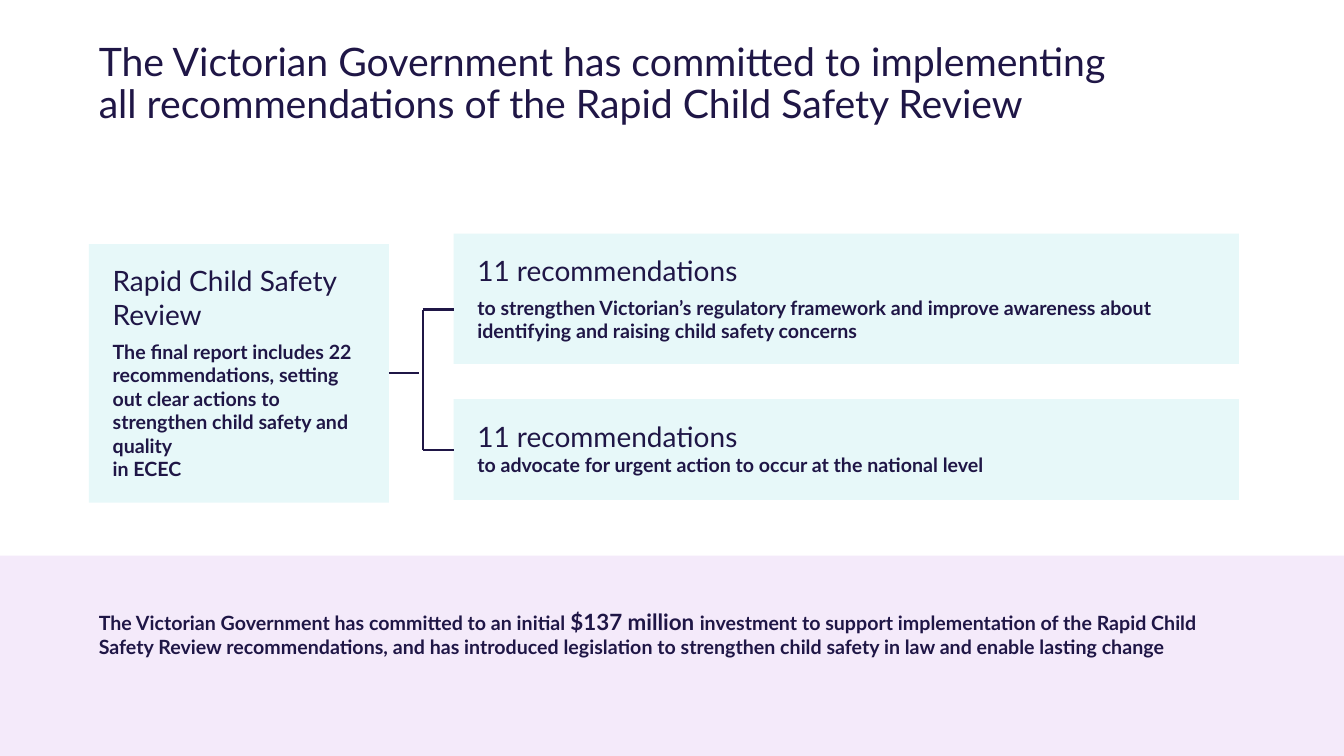
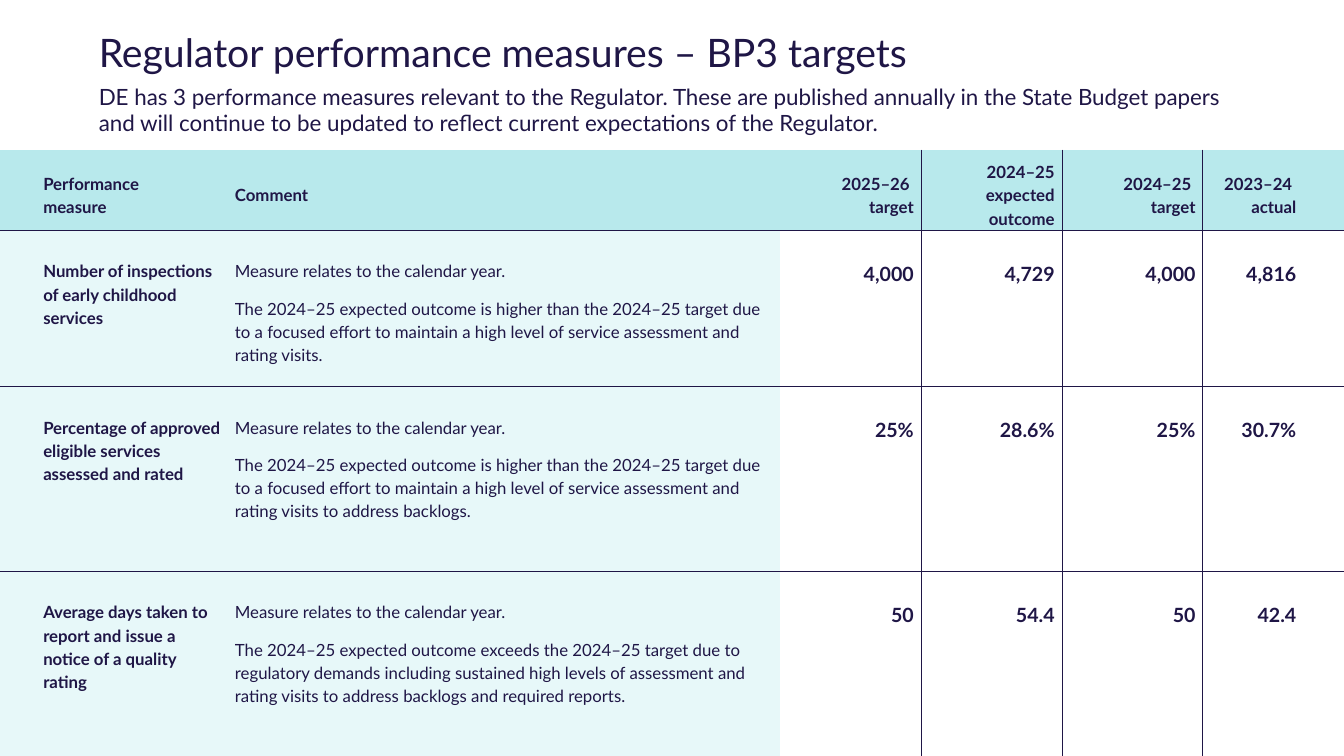
from dataclasses import dataclass

from lxml.etree import SubElement
from pptx import Presentation
from pptx.dml.color import RGBColor as RGB
from pptx.enum.shapes import MSO_CONNECTOR as Connector, MSO_SHAPE as Shape
from pptx.enum.text import MSO_ANCHOR as Anchor, PP_ALIGN as Align
from pptx.oxml.ns import qn
from pptx.util import Cm, Pt


@dataclass(frozen=True)
class Theme:
    font: str = "Lato"
    ink: str = "1F1646"
    pale: str = "E7F8F9"
    header: str = "B8E9EC"
    band: str = "E1C3F3"
    title: int = 28
    heading: int = 20
    lead: int = 16
    body: int = 14
    small: int = 12
    margin: float = 2.24
    width: float = 33.87
    height: float = 19.05


THEME = Theme()

CALENDAR_NOTE = "Measure relates to the calendar year."
HEADERS = ["Performance \nmeasure", "Comment", "2025–26 \ntarget",
           "2024–25 expected outcome", "2024–25 \ntarget", "2023–24 \nactual"]
MEASURES = [
    ("Number of inspections of early childhood services",
     "The 2024–25 expected outcome is higher than the 2024–25 target due to a focused "
     "effort to maintain a high level of service assessment and rating visits.",
     "4,000", "4,729", "4,000", "4,816"),
    ("Percentage of approved eligible services assessed and rated",
     "The 2024–25 expected outcome is higher than the 2024–25 target due to a focused "
     "effort to maintain a high level of service assessment and rating visits to address "
     "backlogs.",
     "25%", "28.6%", "25%", "30.7%"),
    ("Average days taken to report and issue a notice of a quality rating",
     "The 2024–25 expected outcome exceeds the 2024–25 target due to regulatory demands "
     "including sustained high levels of assessment and rating visits to address backlogs "
     "and required reports.",
     "50", "54.4", "50", "42.4"),
]
COLUMN_WIDTHS = [5.74, 13.92] + [3.55] * 4
ROW_HEIGHTS = [2.03, 3.94, 4.65, 4.65]


# Text
def write(frame, text, size=THEME.body, bold=False, align=Align.LEFT,
          before=0, after=0, leading=None, joined=False):
    """Add a paragraph, or continue the last one when joined; \\n breaks a line."""
    paragraph = frame.paragraphs[-1]
    if paragraph.runs and not joined:
        paragraph = frame.add_paragraph()
    if not joined:
        paragraph.alignment = align
        paragraph.space_before, paragraph.space_after = Pt(before), Pt(after)
        paragraph.line_spacing = leading
    for number, line in enumerate(text.split("\n")):
        if number:
            paragraph.add_line_break()
        run = paragraph.add_run()
        run.text = line
        run.font.name, run.font.size, run.font.bold = THEME.font, Pt(size), bold
        run.font.color.rgb = RGB.from_string(THEME.ink)


def text_area(slide, left, top, width, height):
    frame = slide.shapes.add_textbox(Cm(left), Cm(top), Cm(width), Cm(height)).text_frame
    frame.word_wrap = True
    return frame


def add_title(slide, text, height):
    frame = text_area(slide, THEME.margin, 0, 31, height)
    frame.vertical_anchor = Anchor.MIDDLE
    write(frame, text, size=THEME.title, leading=0.9)


# Panels and lines
def add_panel(slide, left, top, width, height, colour):
    panel = slide.shapes.add_shape(Shape.RECTANGLE, Cm(left), Cm(top), Cm(width), Cm(height))
    panel.shadow.inherit = False
    panel.fill.solid()
    panel.fill.fore_color.rgb = RGB.from_string(colour)
    panel.line.fill.background()
    return panel


def add_card(slide, left, top, width, height, heading, detail, **spacing):
    card = add_panel(slide, left, top, width, height, THEME.pale)
    frame = card.text_frame
    frame.word_wrap = True
    frame.vertical_anchor = Anchor.TOP
    frame.margin_left = frame.margin_right = Cm(0.6)
    frame.margin_top = frame.margin_bottom = Cm(0.5)
    write(frame, heading, size=THEME.heading)
    write(frame, detail, bold=True, **spacing)
    return card


def add_line(slide, x1, y1, x2, y2):
    line = slide.shapes.add_connector(Connector.STRAIGHT, Cm(x1), Cm(y1), Cm(x2), Cm(y2))
    line.line.color.rgb = RGB.from_string(THEME.ink)
    line.line.width = Pt(1.5)
    SubElement(line._element.spPr, qn("a:effectLst"))
    return line


# Table cells
def set_borders(cell, sides):
    """Draw the named sides (L, R, T, B) and clear the others."""
    properties = cell._tc.get_or_add_tcPr()
    for side in "LRTB":
        edge = SubElement(properties, qn(f"a:ln{side}"), w=str(Pt(0.5)))
        if side in sides:
            fill = SubElement(edge, qn("a:solidFill"))
            SubElement(fill, qn("a:srgbClr"), val=THEME.ink)
        else:
            SubElement(edge, qn("a:noFill"))


def format_cell(cell, row, column):
    last_row, last_column = len(ROW_HEIGHTS) - 1, len(COLUMN_WIDTHS) - 1
    rules = {"L": column > 2, "R": 2 <= column < last_column,
             "T": row > 0, "B": row < last_row}
    set_borders(cell, [side for side, drawn in rules.items() if drawn])
    if row == 0 or column < 2:
        cell.fill.solid()
        cell.fill.fore_color.rgb = RGB.from_string(THEME.pale if row else THEME.header)
    else:
        cell.fill.background()
    cell.vertical_anchor = Anchor.TOP if row else Anchor.MIDDLE
    cell.margin_left = Cm(0.18 if column else 1.09)
    cell.margin_right = Cm(1.19 if column == last_column else 0.18)
    cell.margin_top, cell.margin_bottom = Cm(0.71 if row else 0.2), Cm(0)


def add_measures_table(slide, top):
    table = slide.shapes.add_table(
        len(ROW_HEIGHTS), len(COLUMN_WIDTHS), Cm(0), Cm(top),
        Cm(sum(COLUMN_WIDTHS)), Cm(sum(ROW_HEIGHTS))).table
    table.first_row = table.horz_banding = False
    for column, width in zip(table.columns, COLUMN_WIDTHS):
        column.width = Cm(width)
    for row, height in zip(table.rows, ROW_HEIGHTS):
        row.height = Cm(height)

    for r, entries in enumerate([HEADERS] + MEASURES):
        for c, entry in enumerate(entries):
            cell = table.cell(r, c)
            format_cell(cell, r, c)
            is_comment = r > 0 and c == 1
            for text in [CALENDAR_NOTE, entry] if is_comment else [entry]:
                write(cell.text_frame, text, bold=not is_comment,
                      size=THEME.body if r and c > 1 else THEME.small,
                      align=Align.RIGHT if c > 1 else Align.LEFT,
                      after=10, leading=1.15)


# Slides
def build_review_slide(slide):
    add_title(slide, "The Victorian Government has committed to implementing \n"
                     "all recommendations of the Rapid Child Safety Review", 4.29)

    # Investment band
    band = add_panel(slide, 0, 14, THEME.width, THEME.height - 14, THEME.band)
    band_colour = band._element.spPr.find(".//" + qn("a:srgbClr"))
    SubElement(band_colour, qn("a:alpha"), val="34000")
    investment = text_area(slide, THEME.margin, 15.19, 28.98, 2.13)
    write(investment, "The Victorian Government has committed to an initial ",
          bold=True, before=6, after=6)
    write(investment, "$137 million ", size=THEME.lead, bold=True, joined=True)
    write(investment, "investment to support implementation of the Rapid Child Safety Review "
          "recommendations, and has introduced legislation to strengthen child safety in law "
          "and enable lasting change", bold=True, joined=True)

    # Review and its two groups of recommendations
    review = add_card(
        slide, THEME.margin, 6.15, 7.56, 6.52, "Rapid Child Safety Review",
        "The final report includes 22 recommendations, setting out clear actions to "
        "strengthen child safety and quality \nin ECEC", before=6)
    groups_left, groups_width = 11.43, 19.79
    add_card(slide, groups_left, 5.89, groups_width, 3.28, "11 recommendations",
             "to strengthen Victorian’s regulatory framework and improve awareness about "
             "identifying and raising child safety concerns", before=6)
    national = add_card(slide, groups_left, 10.06, groups_width, 2.54, "11 recommendations",
                        "to advocate for urgent action to occur at the national level", after=6)

    # Bracket
    spine, upper, lower = 10.65, 7.8, 11.33
    stem = add_line(slide, 9.8, 9.41, 10.57, 9.41)
    stem.begin_connect(review, 3)
    add_line(slide, spine, upper, groups_left, upper)
    lower_branch = add_line(slide, spine, lower, groups_left, lower)
    lower_branch.end_connect(national, 1)
    add_line(slide, spine, upper, spine, lower)


def build_measures_slide(slide):
    add_title(slide, "Regulator performance measures – BP3 targets", 2.77)
    write(text_area(slide, THEME.margin, 1.96, 29.41, 1.63),
          "DE has 3 performance measures relevant to the Regulator. These are published "
          "annually in the State Budget papers and will continue to be updated to reflect "
          "current expectations of the Regulator.", size=THEME.lead)
    add_measures_table(slide, 3.77)


def main():
    deck = Presentation()
    deck.slide_width, deck.slide_height = Cm(THEME.width), Cm(THEME.height)
    for build in (build_review_slide, build_measures_slide):
        build(deck.slides.add_slide(deck.slide_layouts[6]))
    deck.save("out.pptx")


if __name__ == "__main__":
    main()
